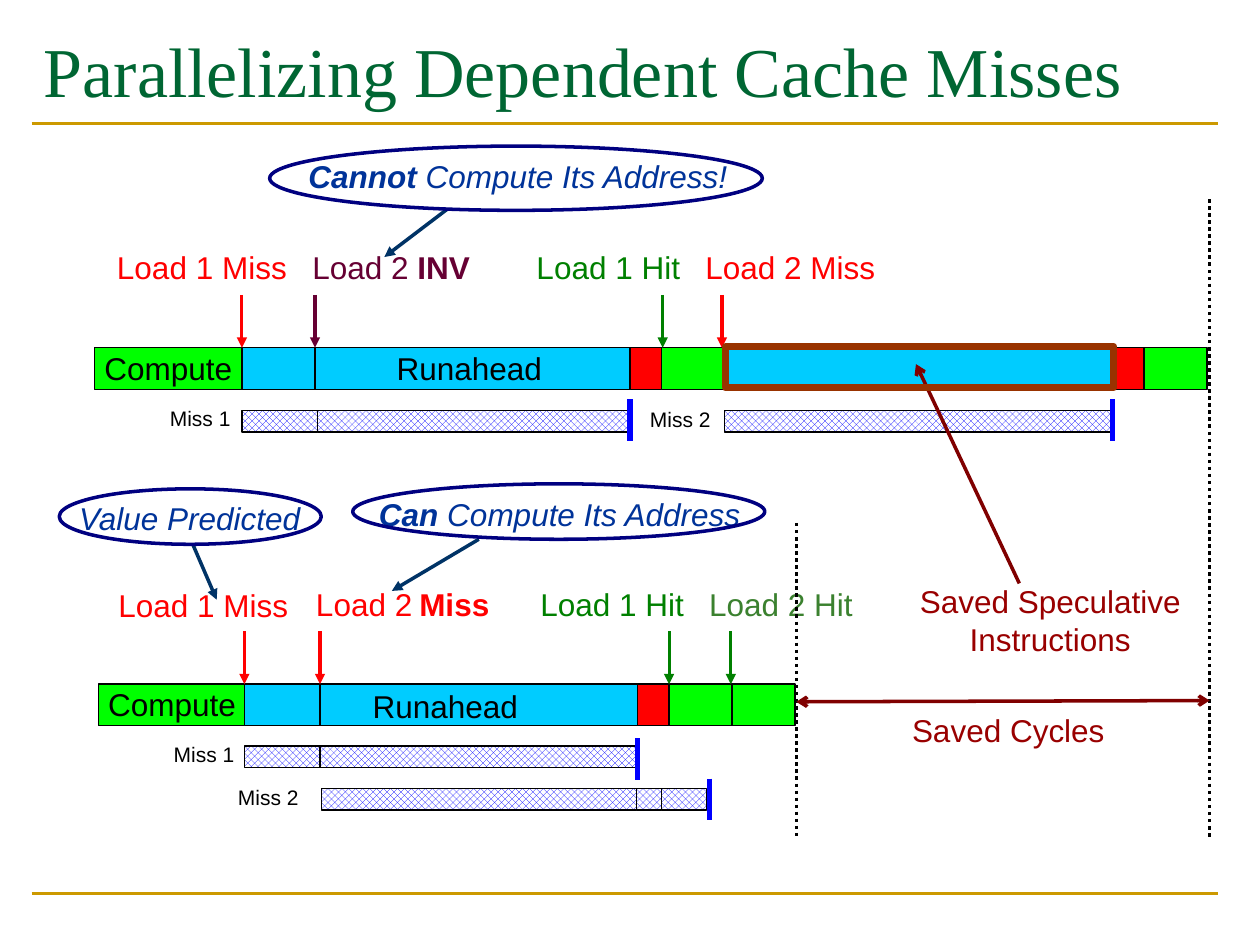
"""Build a slide comparing cache-miss timelines with and without value prediction."""
from itertools import pairwise

from lxml.etree import SubElement
from pptx import Presentation
from pptx.dml.color import RGBColor
from pptx.enum.dml import MSO_LINE, MSO_PATTERN
from pptx.enum.shapes import MSO_CONNECTOR, MSO_SHAPE
from pptx.enum.text import MSO_ANCHOR, PP_ALIGN
from pptx.oxml.ns import qn
from pptx.util import Inches, Pt

THEME = {
    "color": {name: RGBColor.from_string(value) for name, value in {
        "title": "006633", "rule": "CC9900", "black": "000000", "white": "FFFFFF",
        "compute": "00FF00", "runahead": "00CCFF", "red": "FF0000", "hit": "008000",
        "late_hit": "3B812F", "invalid": "660033", "memory": "0000FF", "callout": "003399",
        "oval": "000080", "pointer": "003366", "saved": "990000", "saved_line": "800000",
        "saved_box": "993300"}.items()},
    "size": {"title": Pt(40), "label": Pt(18), "small": Pt(12)},
    "font": {"title": "Times New Roman", "label": "Arial", "small": "Arial"},
}
COLOR = THEME["color"]

presentation = Presentation()
presentation.slide_width = Inches(10)
presentation.slide_height = Inches(7.5)
slide = presentation.slides.add_slide(presentation.slide_layouts[6])


def add_text(runs, box, color, style="label", wrap=False, align=PP_ALIGN.LEFT):
    shape = slide.shapes.add_textbox(*map(Inches, box))
    frame_format = {"word_wrap": wrap, "vertical_anchor": MSO_ANCHOR.TOP}
    for name, value in frame_format.items():
        setattr(shape.text_frame, name, value)
    paragraph = shape.text_frame.paragraphs[0]
    paragraph.alignment = align
    for text, emphasis in runs:
        run = paragraph.add_run()
        run.text = text
        run.font.color.rgb = COLOR[color]
        run_format = {"name": THEME["font"][style], "size": THEME["size"][style],
                      "bold": "b" in emphasis, "italic": "i" in emphasis}
        for name, value in run_format.items():
            setattr(run.font, name, value)


def add_line(start, end, color, width, dash=None, head=None, tail=None):
    connector = slide.shapes.add_connector(
        MSO_CONNECTOR.STRAIGHT, *map(Inches, (*start, *end)))
    connector.line.color.rgb = COLOR[color]
    connector.line.width = Pt(width)
    if dash:
        connector.line.dash_style = dash
    for tag, arrow in (("a:headEnd", head), ("a:tailEnd", tail)):
        if arrow:
            SubElement(connector.line._get_or_add_ln(), qn(tag), type=arrow)
    SubElement(connector._element.spPr, qn("a:effectLst"))


for rule_y in (0.98, 7.09):
    add_line((0.25, rule_y), (9.67, rule_y), "rule", 1.5)
add_text([("Parallelizing Dependent Cache Misses", "")], (0.25, 0.17, 9.42, 1.17),
         "title", "title", True)

timelines = [
    (2.76, [0.75, 1.92, 2.5, 5, 5.25, 5.75, 8.83, 9.08, 9.58],
     ["compute", "runahead", "runahead", "red", "compute", "runahead", "red", "compute"]),
    (5.43, [0.78, 1.94, 2.54, 5.06, 5.31, 5.81, 6.31],
     ["compute", "runahead", "runahead", "red", "compute", "compute"]),
]
memory_bars = [(3.26, [1.92, 2.52, 4.98]), (3.26, [5.75, 8.83]),
               (5.92, [1.94, 2.54, 5.06]), (6.26, [2.55, 5.05, 5.25, 5.61])]
bars = [(left, top, right - left, 0.33, fill)
        for top, edges, fills in timelines
        for (left, right), fill in zip(pairwise(edges), fills)]
bars += [(left, top, right - left, 0.17, None)
         for top, edges in memory_bars for left, right in pairwise(edges)]
for *box, fill in bars:
    shape = slide.shapes.add_shape(MSO_SHAPE.RECTANGLE, *map(Inches, box))
    shape.shadow.inherit = False
    if fill:
        shape.fill.solid()
        shape.fill.fore_color.rgb = COLOR[fill]
    else:
        shape.fill.patterned()
        shape.fill.pattern = MSO_PATTERN.LARGE_CHECKER_BOARD
        shape.fill.fore_color.rgb = COLOR["memory"]
        shape.fill.back_color.rgb = COLOR["white"]
    shape.line.color.rgb = COLOR["black"]
    shape.line.width = Pt(0.75)

labels = [
    ([("Compute", "")], 0.73, 2.72, 1.22, "black"),
    ([("Runahead", "")], 3.05, 2.72, 1.5, "black"),
    ([("Compute", "")], 0.76, 5.39, 1.22, "black"),
    ([("Runahead", "")], 2.86, 5.4, 1.5, "black"),
    ([("Load 1 Miss", "")], 0.83, 1.92, 1.55, "red"),
    ([("Load 2 ", ""), ("INV", "b")], 2.38, 1.92, 1.45, "invalid"),
    ([("Load 1 Hit", "")], 4.16, 1.92, 1.34, "hit"),
    ([("Load 2 Miss", "")], 5.5, 1.92, 1.55, "red"),
    ([("Load 1 Miss", "")], 0.84, 4.6, 1.55, "red"),
    ([("Load 2", "")], 2.41, 4.59, 0.97, "red"),
    ([("Miss", "b")], 3.23, 4.59, 0.76, "red"),
    ([("Load 1 Hit", "")], 4.19, 4.59, 1.34, "hit"),
    ([("Load 2 Hit", "")], 5.53, 4.59, 1.34, "late_hit"),
]
for runs, left, top, width, color in labels:
    add_text(runs, (left, top, width, 0.4), color)
for text, left, top in (("Miss 1", 1.25, 3.17), ("Miss 2", 5.06, 3.18),
                        ("Miss 1", 1.28, 5.84), ("Miss 2", 1.79, 6.18)):
    add_text([(text, "")], (left, top, 0.68, 0.3), "black", "small")

callouts = [
    ([("Cannot", "bi"), (" Compute Its Address!", "i")], (2.35, 1.2, 3.66, 0.4)),
    ([("Value Predicted", "i")], (0.53, 3.91, 2.02, 0.4)),
    ([("Can", "bi"), (" Compute Its Address", "i")], (2.91, 3.88, 3.16, 0.4)),
]
for runs, box in callouts:
    add_text(runs, box, "callout", wrap=True)
add_text([("Saved Speculative Instructions", "")], (7.14, 4.57, 2.39, 0.7),
         "saved", wrap=True, align=PP_ALIGN.CENTER)
add_text([("Saved Cycles", "")], (7.14, 5.59, 1.83, 0.4), "saved", wrap=True)

events = [(1.92, 2.76, "red"), (2.5, 2.76, "invalid"), (5.26, 2.76, "hit"), (5.73, 2.76, "red"),
          (1.94, 5.43, "red"), (2.54, 5.43, "red"), (5.31, 5.43, "hit"), (5.8, 5.43, "hit")]
for x, y, color in events:
    add_line((x, y - 0.42), (x, y), color, 1.75, tail="triangle")
for x, y in ((5, 3.17), (8.83, 3.17), (5.06, 5.86), (5.63, 6.18)):
    add_line((x, y), (x, y + 0.33), "memory", 3)
for start, end in (((3.55, 1.66), (3.05, 2.04)), ((1.53, 4.32), (1.72, 4.76)),
                   ((3.8, 4.28), (3.11, 4.69))):
    add_line(start, end, "pointer", 2, tail="triangle")
for x, top in ((6.32, 4.15), (9.6, 1.58)):
    add_line((x, top), (x, 6.65), "black", 2, dash=MSO_LINE.ROUND_DOT)
add_line((6.32, 5.57), (9.6, 5.56), "saved_line", 2, head="arrow", tail="arrow")
add_line((7.27, 2.89), (8.09, 4.63), "saved_line", 2, head="arrow")

outlines = [
    (MSO_SHAPE.OVAL, (2.14, 1.16, 3.91, 0.51), "oval", 2),
    (MSO_SHAPE.OVAL, (0.47, 3.88, 2.08, 0.44), "oval", 2),
    (MSO_SHAPE.OVAL, (2.8, 3.84, 3.27, 0.44), "oval", 2),
    (MSO_SHAPE.RECTANGLE, (5.76, 2.75, 3.08, 0.33), "saved_box", 4),
]
for kind, box, color, width in outlines:
    shape = slide.shapes.add_shape(kind, *map(Inches, box))
    shape.shadow.inherit = False
    shape.fill.background()
    shape.line.color.rgb = COLOR[color]
    shape.line.width = Pt(width)

presentation.save("out.pptx")
